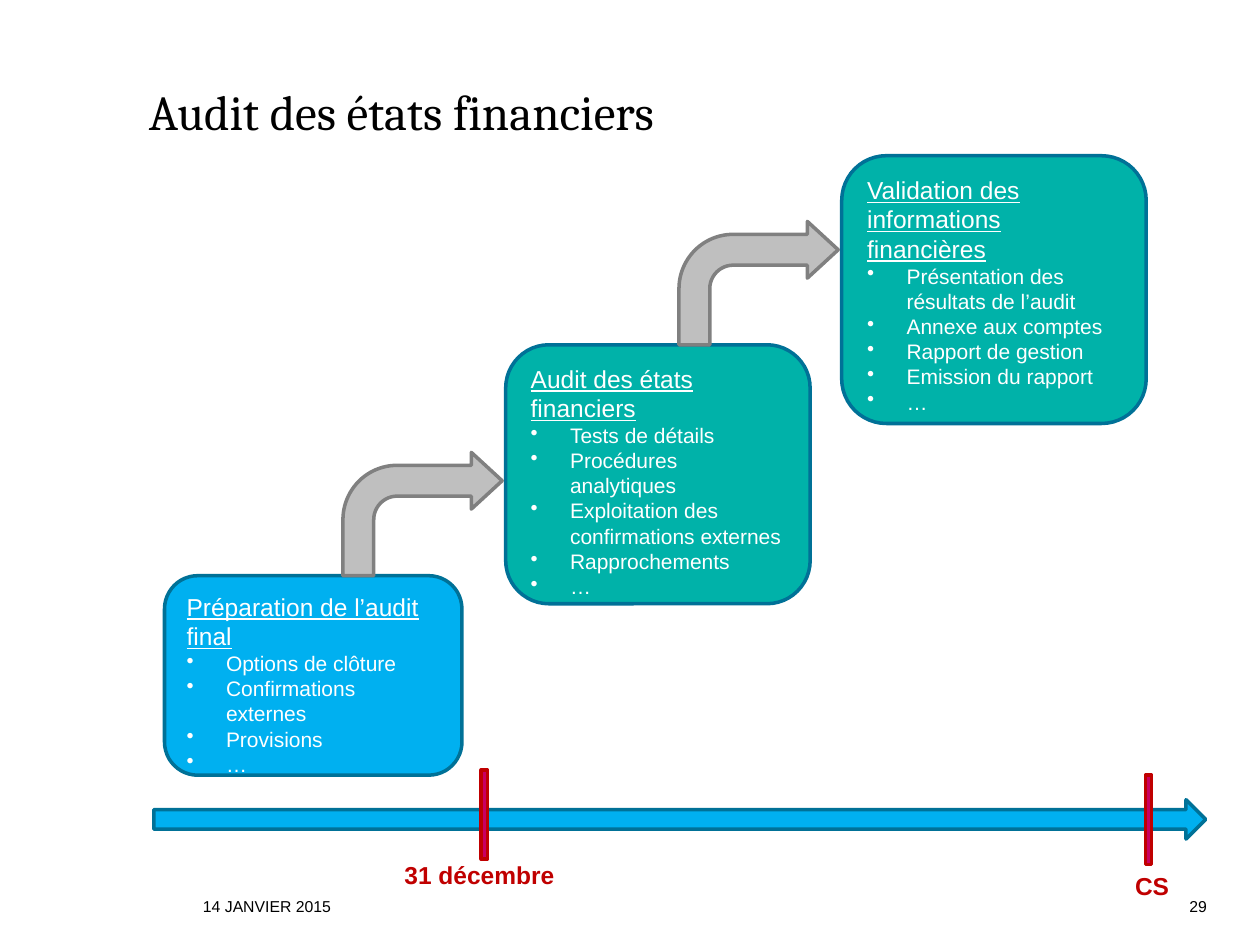
import dataclasses

import pptx
import pptx.dml.color
import pptx.enum.shapes
import pptx.enum.text
import pptx.oxml.ns
import pptx.util
from lxml import etree

Pt = pptx.util.Pt
SHAPES = pptx.enum.shapes.MSO_SHAPE
ANCHOR = pptx.enum.text.MSO_ANCHOR
ALIGN = pptx.enum.text.PP_ALIGN
AUTO_SIZE = pptx.enum.text.MSO_AUTO_SIZE


@dataclasses.dataclass(frozen=True)
class Theme:
    black: str = "000000"
    white: str = "FFFFFF"
    blue: str = "00B0F0"
    teal: str = "00B2A9"
    outline: str = "007197"
    grey: str = "BFBFBF"
    grey_outline: str = "808080"
    magenta: str = "C90062"
    red: str = "C00000"
    title_font: str = "Cambria"
    body_font: str = "Arial"
    title_size: float = 28
    heading_size: float = 14
    item_size: float = 12
    footer_size: float = 9
    line_width: float = 2
    bullet_indent: float = 22.5


THEME = Theme()

PHASES = [
    ((94, 329, 170, 114), THEME.blue, "Préparation de l’audit final",
     ["Options de clôture", "Confirmations externes", "Provisions", "…"]),
    ((289, 197, 174, 148), THEME.teal, "Audit des états financiers",
     ["Tests de détails", "Procédures analytiques",
      "Exploitation des confirmations externes", "Rapprochements", "…"]),
    ((481, 89, 174, 153), THEME.teal, "Validation des informations financières",
     ["Présentation des résultats de l’audit", "Annexe aux comptes",
      "Rapport de gestion", "Emission du rapport", "…"]),
]
MILESTONES = [
    ((275, 440), (224, 488, 101, 24.5), "31 décembre"),
    ((654.5, 443), (641.5, 494, 35, 24.5), "CS"),
]
STEP_ARROW_SIZE = (91, 70.5)
STEP_ARROW_GAP = 2
STEP_ARROW_BENDS = (0.25, 0.23, 0.25, 0.44)
NO_MARGINS = dict.fromkeys(
    ("margin_left", "margin_top", "margin_right", "margin_bottom"), 0)


def rgb(value):
    return pptx.dml.color.RGBColor.from_string(value)


def apply(target, values):
    for name, value in values.items():
        setattr(target, name, value)


def write(paragraph, text, size, color, font=THEME.body_font, **extra):
    run = paragraph.add_run()
    run.text = text
    apply(run.font, {"name": font, "size": Pt(size), **extra})
    run.font.color.rgb = rgb(color)


def add_block(slide, preset, bounds, fill, outline):
    block = slide.shapes.add_shape(preset, *map(Pt, bounds))
    block.shadow.inherit = False
    block.fill.solid()
    block.fill.fore_color.rgb = rgb(fill)
    block.line.color.rgb = rgb(outline)
    block.line.width = Pt(THEME.line_width)
    return block


def add_bullet(paragraph):
    properties = paragraph._p.get_or_add_pPr()
    indent = Pt(THEME.bullet_indent)
    properties.set("marL", str(indent))
    properties.set("indent", str(-indent))
    bullet = etree.SubElement(properties, pptx.oxml.ns.qn("a:buChar"))
    bullet.set("char", "•")


def add_phase(slide, bounds, fill, heading, items):
    phase = add_block(slide, SHAPES.ROUNDED_RECTANGLE, bounds, fill, THEME.outline)
    frame = phase.text_frame
    apply(frame, {"word_wrap": True, "vertical_anchor": ANCHOR.TOP})
    first = frame.paragraphs[0]
    first.alignment = ALIGN.LEFT
    write(first, heading, THEME.heading_size, THEME.white, underline=True)
    for item in items:
        paragraph = frame.add_paragraph()
        paragraph.alignment = ALIGN.LEFT
        add_bullet(paragraph)
        write(paragraph, item, THEME.item_size, THEME.white)


def add_step_arrow(slide, start, end):
    width, height = STEP_ARROW_SIZE
    bounds = (end[0] - STEP_ARROW_GAP - width, start[1] - height, width, height)
    arrow = add_block(slide, SHAPES.BENT_ARROW, bounds,
                      THEME.grey, THEME.grey_outline)
    for index, bend in enumerate(STEP_ARROW_BENDS):
        arrow.adjustments[index] = bend


def add_label(slide, bounds, text, size, color, frame_format,
              alignment=ALIGN.LEFT, **extra):
    label = slide.shapes.add_textbox(*map(Pt, bounds))
    apply(label.text_frame, frame_format)
    paragraph = label.text_frame.paragraphs[0]
    paragraph.alignment = alignment
    write(paragraph, text, size, color, **extra)


def add_milestone(slide, position, label_bounds, text):
    add_block(slide, SHAPES.RECTANGLE, (*position, 3.6, 51),
              THEME.magenta, THEME.red)
    add_label(slide, label_bounds, text, THEME.heading_size, THEME.red,
              {"word_wrap": False, "auto_size": AUTO_SIZE.SHAPE_TO_FIT_TEXT},
              bold=True)


def set_title(slide, text):
    title = slide.shapes.title
    apply(title, {"left": Pt(85), "top": Pt(0), "width": Pt(594), "height": Pt(80)})
    apply(title.text_frame, {**NO_MARGINS, "word_wrap": True,
                             "auto_size": AUTO_SIZE.NONE,
                             "vertical_anchor": ANCHOR.BOTTOM})
    paragraph = title.text_frame.paragraphs[0]
    paragraph.alignment = ALIGN.LEFT
    write(paragraph, text, THEME.title_size, THEME.black, THEME.title_font)


def add_footer(slide):
    footer_format = {**NO_MARGINS, "word_wrap": True,
                     "vertical_anchor": ANCHOR.BOTTOM}
    for bounds, text, alignment in (
        ((116, 509, 510.5, 14.5), "14 JANVIER 2015", ALIGN.LEFT),
        ((632, 509, 57.6, 14.5), "29", ALIGN.RIGHT),
    ):
        add_label(slide, bounds, text, THEME.footer_size, THEME.black,
                  footer_format, alignment)


def main():
    deck = pptx.Presentation()
    apply(deck, {"slide_width": Pt(720), "slide_height": Pt(540)})
    slide = deck.slides.add_slide(deck.slide_layouts[5])
    set_title(slide, "Audit des états financiers")
    add_block(slide, SHAPES.RIGHT_ARROW, (88, 457, 601, 22.5),
              THEME.blue, THEME.outline)
    for phase in PHASES:
        add_phase(slide, *phase)
    for start, end in zip(PHASES, PHASES[1:]):
        add_step_arrow(slide, start[0], end[0])
    for milestone in MILESTONES:
        add_milestone(slide, *milestone)
    add_footer(slide)
    deck.save("out.pptx")


if __name__ == "__main__":
    main()
